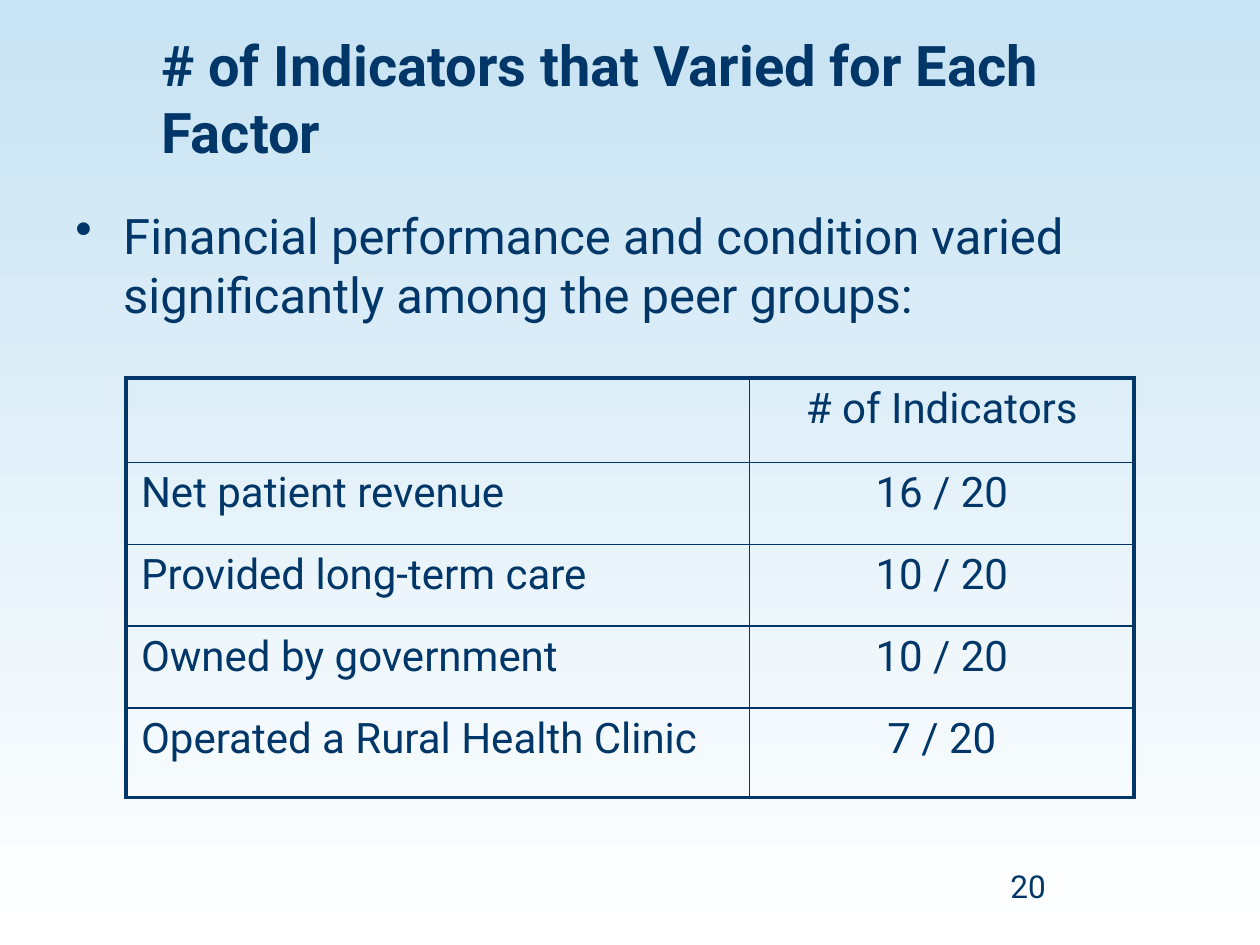
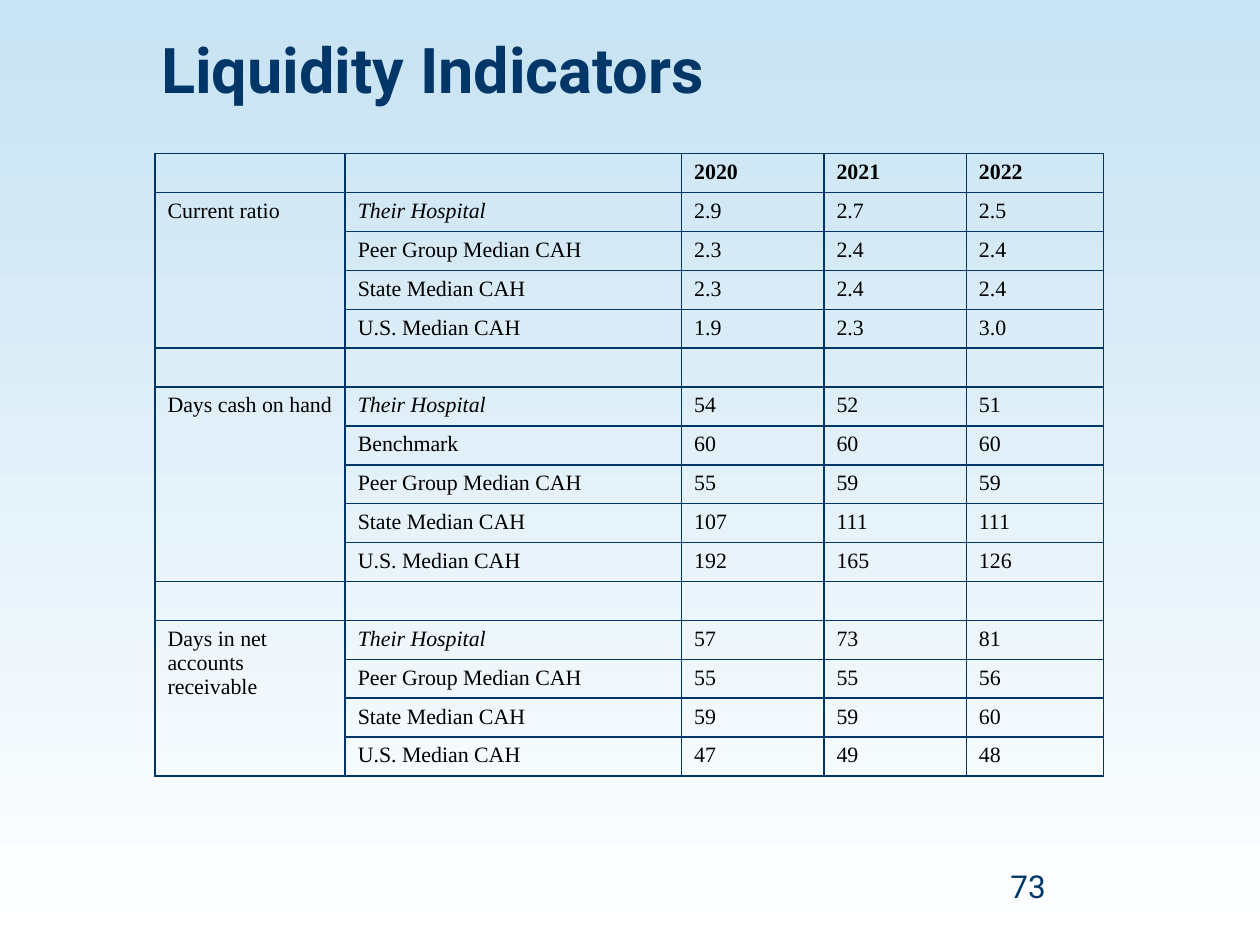
from lxml.etree import SubElement
from pptx import Presentation
from pptx.dml.color import RGBColor
from pptx.enum.text import MSO_ANCHOR, PP_ALIGN
from pptx.oxml import parse_xml
from pptx.oxml.ns import nsdecls, qn
from pptx.util import Inches, Pt

COLORS = {"navy": "003768", "black": "000000", "sky": "C8E3F3", "white": "FFFFFF"}
SANS, SERIF = "Roboto", "Times New Roman"

VARIED_TITLE = "# of Indicators that Varied for Each Factor"
VARIED_POINT = "Financial performance and condition varied significantly among the peer groups:"
VARIED_ROWS = [
    ("", "# of Indicators"),
    ("Net patient revenue", "16 / 20"),
    ("Provided long-term care", "10 / 20"),
    ("Owned by government", "10 / 20"),
    ("Operated a Rural Health Clinic", "7 / 20"),
]
VARIED_COLS = [4.95, 3.05]
VARIED_HEIGHTS = [0.67, 0.65, 0.65, 0.65, 0.71]

LIQUIDITY_TITLE = "Liquidity Indicators"
YEARS = ["2020", "2021", "2022"]
HOSPITAL, BENCHMARK = "Their Hospital", "Benchmark"
PEER, STATE, US = "Peer Group Median CAH", "State Median CAH", "U.S. Median CAH"
LIQUIDITY_GROUPS = [
    ("Current ratio", [
        (HOSPITAL, "2.9", "2.7", "2.5"),
        (PEER, "2.3", "2.4", "2.4"),
        (STATE, "2.3", "2.4", "2.4"),
        (US, "1.9", "2.3", "3.0"),
    ]),
    ("Days cash on hand", [
        (HOSPITAL, "54", "52", "51"),
        (BENCHMARK, "60", "60", "60"),
        (PEER, "55", "59", "59"),
        (STATE, "107", "111", "111"),
        (US, "192", "165", "126"),
    ]),
    ("Days in net accounts receivable", [
        (HOSPITAL, "57", "73", "81"),
        (PEER, "55", "55", "56"),
        (STATE, "59", "59", "60"),
        (US, "47", "49", "48"),
    ]),
]
LIQUIDITY_COLS = [1.51, 2.67, 1.13, 1.13, 1.09]
LIQUIDITY_ROW = 0.3

THIN, THICK = 1, 2.25


def write(tf, text, size=18, font=SANS, color="navy", bold=False, italic=False,
          align=PP_ALIGN.LEFT, bullet=None):
    p = tf.paragraphs[0]
    p.alignment = align
    if bullet:
        pPr = p._p.get_or_add_pPr()
        indent = Inches(0.38)
        pPr.set("marL", str(indent))
        pPr.set("indent", str(-indent))
        SubElement(pPr, qn("a:buChar"), char=bullet)
    if not text:
        SubElement(p._p, qn("a:endParaRPr"), sz=str(int(size * 100)))
        return
    r = p.add_run()
    r.text = text
    r.font.size = Pt(size)
    r.font.name = font
    r.font.bold = bold
    r.font.italic = italic
    r.font.color.rgb = RGBColor.from_string(COLORS[color])


def add_text(slide, box, text, **fmt):
    tf = slide.shapes.add_textbox(*map(Inches, box)).text_frame
    tf.word_wrap = True
    tf.vertical_anchor = MSO_ANCHOR.TOP
    write(tf, text, **fmt)


def add_slide(prs, title, title_size, number):
    slide = prs.slides.add_slide(prs.slide_layouts[6])
    fill = slide.background.fill
    fill.gradient()
    fill.gradient_angle = 270
    for stop, position, color in zip(fill.gradient_stops, (0.01, 1), ("sky", "white")):
        stop.position = position
        stop.color.rgb = RGBColor.from_string(COLORS[color])
    add_text(slide, (1.18, 0.19, 8.26, 1.09), title, size=title_size, bold=True)
    add_text(slide, (7.92, 6.83, 2.08, 0.5), number)
    return slide


def add_grid(slide, left, top, widths, heights):
    frame = slide.shapes.add_table(len(heights), len(widths), Inches(left), Inches(top),
                                   Inches(sum(widths)), Inches(sum(heights)))
    table = frame.table
    table.first_row = table.horz_banding = False
    for col, width in zip(table.columns, widths):
        col.width = Inches(width)
    for row, height in zip(table.rows, heights):
        row.height = Inches(height)
    return table


def style_cell(cell, left=THIN, right=THIN, top=THIN, bottom=THIN):
    cell.fill.background()
    tcPr = cell._tc.get_or_add_tcPr()
    sides = {"lnL": left, "lnR": right, "lnT": top, "lnB": bottom}
    for i, (tag, width) in enumerate(sides.items()):
        tcPr.insert(i, parse_xml(
            f'<a:{tag} {nsdecls("a")} w="{Pt(width)}"><a:solidFill>'
            f'<a:srgbClr val="{COLORS["navy"]}"/></a:solidFill></a:{tag}>'))


def build_varied(prs):
    slide = add_slide(prs, VARIED_TITLE, 32, "20")
    table = add_grid(slide, 1, 3, VARIED_COLS, VARIED_HEIGHTS)
    last_row, last_col = len(VARIED_ROWS) - 1, len(VARIED_COLS) - 1
    for i, row in enumerate(VARIED_ROWS):
        for j, text in enumerate(row):
            cell = table.cell(i, j)
            style_cell(cell,
                       left=THICK if j == 0 else THIN,
                       right=THICK if j == last_col else THIN,
                       top=THICK if i == 0 else THIN,
                       bottom=THICK if i == last_row else THIN)
            cell.margin_left = cell.margin_right = Inches(0.12)
            write(cell.text_frame, text, size=24,
                  align=PP_ALIGN.CENTER if j else PP_ALIGN.LEFT)
    add_text(slide, (0.5, 1.58, 9.17, 1.25), VARIED_POINT, size=28, bullet="•")


def build_liquidity(prs):
    slide = add_slide(prs, LIQUIDITY_TITLE, 36, "73")
    rows, spans = [["", "", *YEARS]], []
    for name, measures in LIQUIDITY_GROUPS:
        if spans:
            rows.append([""] * len(LIQUIDITY_COLS))
        spans.append((len(rows), len(rows) + len(measures) - 1))
        for k, measure in enumerate(measures):
            rows.append([name if k == 0 else "", *measure])

    table = add_grid(slide, 1.23, 1.22, LIQUIDITY_COLS, [LIQUIDITY_ROW] * len(rows))
    for i, row in enumerate(rows):
        for j, text in enumerate(row):
            cell = table.cell(i, j)
            style_cell(cell)
            write(cell.text_frame, text, size=12.5, font=SERIF, color="black",
                  bold=i == 0, italic=text == HOSPITAL)
    for first, last in spans:
        table.cell(first, 0).merge(table.cell(last, 0))


def main():
    prs = Presentation()
    prs.slide_width, prs.slide_height = Inches(10), Inches(7.5)
    build_varied(prs)
    build_liquidity(prs)
    prs.save("out.pptx")


if __name__ == "__main__":
    main()
